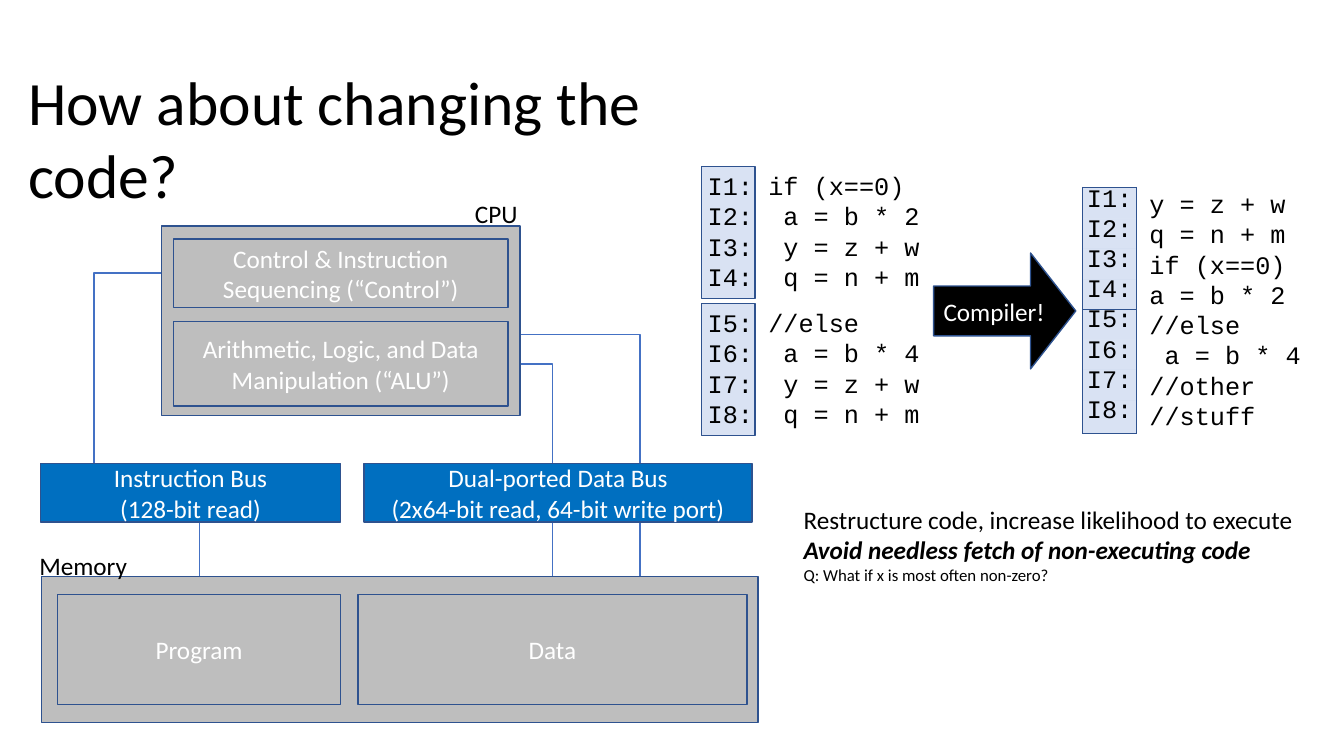
from dataclasses import dataclass

from lxml import etree
from pptx import Presentation
from pptx import util as u
from pptx.dml.color import RGBColor
from pptx.enum import shapes, text
from pptx.oxml import ns

Inches = u.Inches


@dataclass(frozen=True)
class Theme:
    sans: str = "Calibri"
    mono: str = "Courier New"
    ink: str = "000000"
    light: str = "FFFFFF"
    grey: str = "BEBEBE"
    bus: str = "006FC0"
    edge: str = "2E528F"
    wire: str = "4471C4"
    tint: str = "4471C4"
    title: float = 44
    body: float = 18
    small: float = 12
    code_pitch: float = 21.6


THEME = Theme()


def color(value):
    return RGBColor.from_string(value)


def add_span(para, words, ink=THEME.ink, face=THEME.sans, size=THEME.body, strong=False):
    span = para.add_run()
    span.text = words
    span.font.name = face
    span.font.size = u.Pt(size)
    span.font.color.rgb = color(ink)
    span.font.bold = span.font.italic = strong


def set_frame(frame, left=0, top=0, wrap=True, anchor=text.MSO_ANCHOR.TOP):
    frame.margin_left, frame.margin_top = Inches(left), Inches(top)
    frame.margin_right = frame.margin_bottom = 0
    frame.word_wrap = wrap
    frame.auto_size = text.MSO_AUTO_SIZE.NONE
    frame.vertical_anchor = anchor


def next_para(frame, index):
    return frame.add_paragraph() if index else frame.paragraphs[0]


def set_tint(holder):
    paint = holder.find(ns.qn("a:solidFill"))[0]
    etree.SubElement(paint, ns.qn("a:alpha"), val="20000")


def add_box(page, place, fill, lines=(), kind=shapes.MSO_SHAPE.RECTANGLE):
    box = page.shapes.add_shape(kind, *map(Inches, place))
    box.shadow.inherit = False
    box.fill.solid()
    box.fill.fore_color.rgb = color(fill)
    box.line.color.rgb = color(THEME.edge)
    box.line.width = u.Pt(1)
    set_frame(box.text_frame, anchor=text.MSO_ANCHOR.MIDDLE)
    for index, words in enumerate(lines):
        para = next_para(box.text_frame, index)
        para.alignment = text.PP_ALIGN.CENTER
        add_span(para, words, THEME.light)
    return box


def add_label(page, place, lines):
    box = page.shapes.add_textbox(*map(Inches, place))
    set_frame(box.text_frame, left=0.01, top=0.03, wrap=False)
    for index, (words, size, strong) in enumerate(lines):
        add_span(next_para(box.text_frame, index), words, size=size, strong=strong)


def add_wire(page, points):
    start, *rest = [tuple(map(Inches, point)) for point in points]
    builder = page.shapes.build_freeform(*start)
    builder.add_line_segments(rest, close=False)
    wire = builder.convert_to_shape()
    wire.shadow.inherit = False
    wire.fill.background()
    wire.line.color.rgb = color(THEME.wire)
    wire.line.width = u.Pt(1.25)


def write_code(box, lines, left):
    set_frame(box.text_frame, left=left, top=0.04, wrap=False)
    for index, (words, level) in enumerate(lines):
        para = next_para(box.text_frame, index)
        para.alignment = text.PP_ALIGN.LEFT
        para.line_spacing = u.Pt(THEME.code_pitch)
        if level:
            para._p.get_or_add_pPr().set("marL", str(Inches(0.15)))
        add_span(para, words, face=THEME.mono)


def add_code(page, place, lines):
    write_code(page.shapes.add_textbox(*map(Inches, place)), lines, left=0.01)


def add_numbered_code(page, top, first, lines):
    strip = add_box(page, (6.96, top, 0.53, 1.31), THEME.tint)
    set_tint(strip.element.spPr)
    numbers = [(f"I{first + step}:", 0) for step in range(len(lines))]
    write_code(strip, numbers, left=0.06)
    add_code(page, (7.61, top, 1.55, 1.31), lines)


def set_borders(cell, visible):
    holder = cell._tc.get_or_add_tcPr()
    for index, side in enumerate("LRTB"):
        border = etree.Element(ns.qn(f"a:ln{side}"), w=str(u.Pt(1)))
        if side in visible:
            paint = etree.SubElement(border, ns.qn("a:solidFill"))
            etree.SubElement(paint, ns.qn("a:srgbClr"), val=THEME.edge)
        else:
            etree.SubElement(border, ns.qn("a:noFill"))
        holder.insert(index, border)


def add_number_table(page, place, heights):
    table = page.shapes.add_table(len(heights), 1, *map(Inches, place)).table
    table.first_row = table.horz_banding = False
    borders = {0: "LRT", 3: "LRB", 4: "LRT", 7: "LRB"}
    for index, height in enumerate(heights):
        table.rows[index].height = Inches(height)
        cell = table.cell(index, 0)
        cell.margin_left = cell.margin_right = cell.margin_top = cell.margin_bottom = 0
        cell.fill.solid()
        cell.fill.fore_color.rgb = color(THEME.tint)
        set_tint(cell._tc.get_or_add_tcPr())
        set_borders(cell, borders.get(index, "LR"))
        para = cell.text_frame.paragraphs[0]
        para.alignment = text.PP_ALIGN.CENTER
        para.line_spacing = u.Pt(18.6 if index else 19.6)
        add_span(para, f"I{index + 1}:", face=THEME.mono)


def add_title(page, words):
    title = page.shapes.title
    title.left, title.top, title.width, title.height = map(Inches, (0.27, 0.61, 7.65, 0.76))
    set_frame(title.text_frame, left=0.01, top=0.02)
    para = title.text_frame.paragraphs[0]
    para.alignment = text.PP_ALIGN.LEFT
    add_span(para, words, size=THEME.title)


def add_machine(page):
    add_wire(page, [(1.6, 2.71), (0.93, 2.71), (0.93, 4.6)])
    add_wire(page, [(1.98, 5.18), (1.98, 5.72)])
    add_wire(page, [(5.16, 3.61), (5.48, 3.61), (5.48, 5.72)])
    add_wire(page, [(5.16, 3.32), (6.35, 3.32), (6.35, 5.72)])
    add_box(page, (0.41, 5.72, 7.11, 1.45), THEME.grey)
    add_box(page, (0.57, 5.9, 2.81, 1.09), THEME.grey, ["Program"])
    add_box(page, (3.55, 5.9, 3.86, 1.09), THEME.grey, ["Data"])
    add_box(page, (0.4, 4.6, 2.98, 0.58), THEME.bus, ["Instruction Bus", "(128-bit read)"])
    add_box(page, (3.61, 4.6, 3.85, 0.58), THEME.bus,
            ["Dual-ported Data Bus", "(2x64-bit read, 64-bit write port)"])
    add_box(page, (1.6, 2.24, 3.56, 1.88), THEME.grey)
    add_box(page, (1.72, 2.37, 3.32, 0.68), THEME.grey,
            ["Control & Instruction", "Sequencing (“Control”)"])
    add_box(page, (1.72, 3.19, 3.32, 0.84), THEME.grey,
            ["Arithmetic, Logic, and Data", "Manipulation (“ALU”)"])
    add_label(page, (0.38, 5.43, 0.9, 0.33), [("Memory", THEME.body, False)])
    add_label(page, (4.7, 1.94, 0.45, 0.33), [("CPU", THEME.body, False)])


def add_compiler_story(page):
    add_numbered_code(page, 1.65, 1, [
        ("if (x==0)", 0), ("a = b * 2", 1), ("y = z + w", 1), ("q = n + m", 1)])
    add_numbered_code(page, 3.01, 5, [
        ("//else", 0), ("a = b * 4", 1), ("y = z + w", 1), ("q = n + m", 1)])
    arrow = add_box(page, (9.26, 2.51, 1.41, 1.15), THEME.ink, ["Compiler!"],
                    shapes.MSO_SHAPE.RIGHT_ARROW)
    arrow.adjustments[0], arrow.adjustments[1] = 0.43, 0.39
    set_frame(arrow.text_frame, left=0.1, wrap=False, anchor=text.MSO_ANCHOR.MIDDLE)
    arrow.text_frame.paragraphs[0].alignment = text.PP_ALIGN.LEFT
    add_number_table(page, (10.74, 1.86, 0.53, 2.44), [0.31] + [0.3] * 6 + [0.33])
    add_code(page, (11.39, 1.83, 1.52, 2.43), [
        ("y = z + w", 0), ("q = n + m", 0), ("if (x==0)", 0), ("a = b * 2", 0),
        ("//else", 0), ("a = b * 4", 1), ("//other", 0), ("//stuff", 0)])
    add_label(page, (7.96, 4.97, 4.89, 0.83), [
        ("Restructure code, increase likelihood to execute", THEME.body, False),
        ("Avoid needless fetch of non-executing code", THEME.body, True),
        ("Q: What if x is most often non-zero?", THEME.small, False)])


def main():
    deck = Presentation()
    deck.slide_width, deck.slide_height = Inches(13.33), Inches(7.5)
    page = deck.slides.add_slide(deck.slide_layouts[5])
    add_title(page, "How about changing the code?")
    add_machine(page)
    add_compiler_story(page)
    deck.save("out.pptx")


if __name__ == "__main__":
    main()
